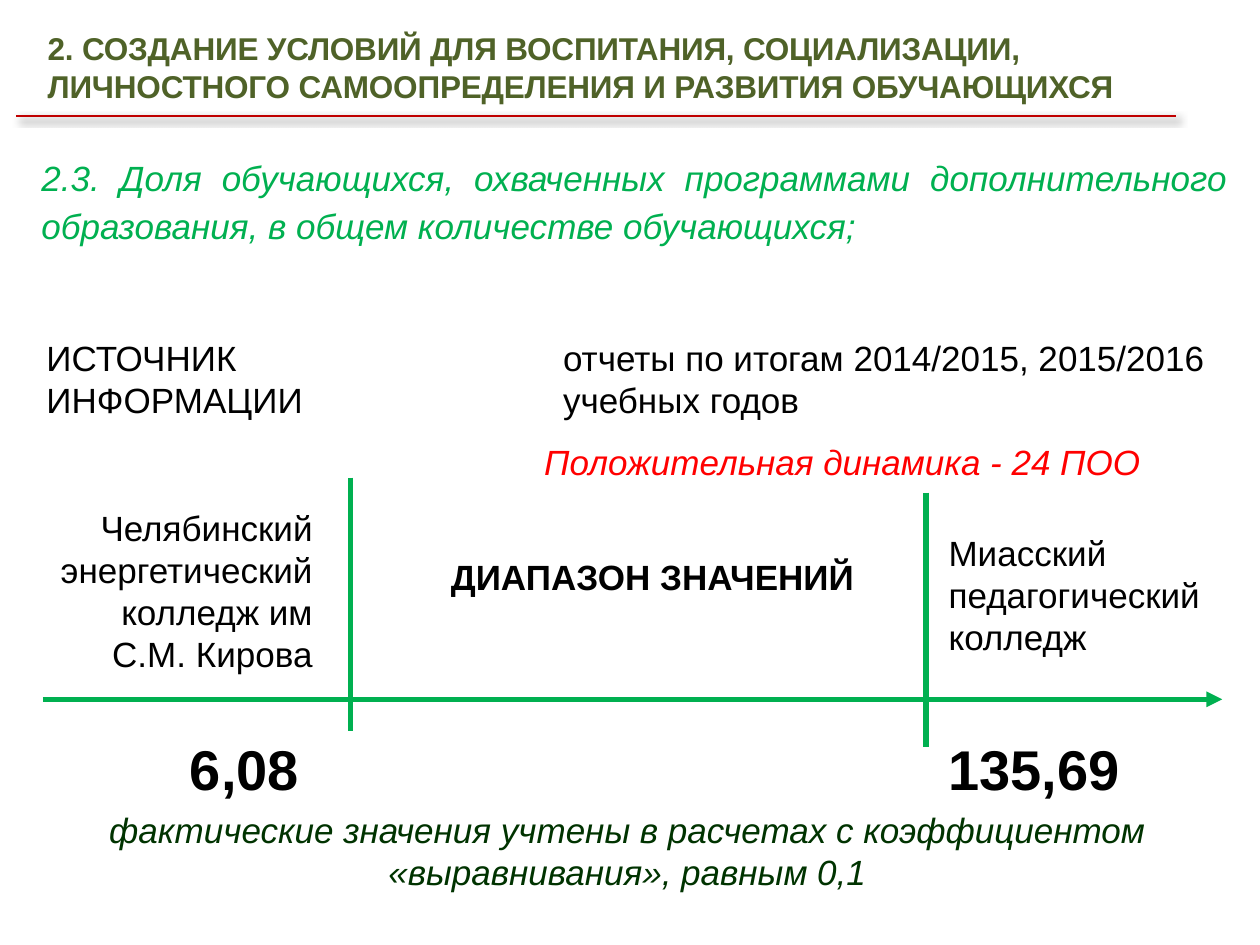
from lxml import etree
from pptx import Presentation
from pptx.dml.color import RGBColor
from pptx.enum.shapes import MSO_CONNECTOR, MSO_SHAPE
from pptx.enum.text import MSO_ANCHOR, MSO_AUTO_SIZE, PP_ALIGN
from pptx.oxml import parse_xml
from pptx.oxml.ns import nsdecls, qn
from pptx.util import Inches, Pt

LEFT, CENTER, RIGHT, JUSTIFY = PP_ALIGN.LEFT, PP_ALIGN.CENTER, PP_ALIGN.RIGHT, PP_ALIGN.JUSTIFY
STRAIGHT = MSO_CONNECTOR.STRAIGHT
RECTANGLE = MSO_SHAPE.RECTANGLE
MIDDLE = MSO_ANCHOR.MIDDLE
FIT_SHAPE = MSO_AUTO_SIZE.SHAPE_TO_FIT_TEXT

COLORS = {
    "white": "FFFFFF",
    "black": "000000",
    "olive": "4F6228",
    "green": "00B050",
    "dark_green": "003300",
    "red": "FF0000",
    "dark_red": "C00000",
}
AXIS_Y = 5.55
VALUE_TOP = 5.78
MAXIMUM_LEFT = 7.43


def rgb(name):
    return RGBColor.from_string(COLORS[name])


def write_text(shape, text, color="black", size=20, bold=False, italic=False,
               align=LEFT, wrap=True):
    """Fill a shape with one paragraph and return that paragraph."""
    frame = shape.text_frame
    frame.word_wrap = wrap
    frame.auto_size = FIT_SHAPE
    para = frame.paragraphs[0]
    para.text = text
    para.alignment = align
    font = para.font
    font.name = "Arial"
    font.size = Pt(size)
    font.bold = bold
    font.italic = italic
    font.color.rgb = rgb(color)
    return para


def add_text(page, area, text, **style):
    box = page.shapes.add_textbox(*map(Inches, area))
    return write_text(box, text, **style)


def add_filled_label(page, area, text, **style):
    label = page.shapes.add_shape(RECTANGLE, *map(Inches, area))
    label.shadow.inherit = False
    label.fill.solid()
    label.fill.fore_color.rgb = rgb("white")
    label.line.fill.background()
    label.text_frame.vertical_anchor = MIDDLE
    write_text(label, text, **style)


def add_line(page, start, end, color="green", width=3):
    """Draw a straight line and return it with its empty effect list."""
    line = page.shapes.add_connector(STRAIGHT, *map(Inches, start + end))
    line.line.color.rgb = rgb(color)
    line.line.width = Pt(width)
    effects = etree.SubElement(line._element.spPr, qn("a:effectLst"))
    return line, effects


def add_heading(page):
    _, effects = add_line(page, (0.13, 0.92), (9.33, 0.92), "dark_red", 1.5)
    effects.append(parse_xml(
        f'<a:outerShdw {nsdecls("a")} blurRad="{Pt(4)}" dist="{Pt(3)}" dir="2700000" '
        'algn="tl" rotWithShape="0"><a:srgbClr val="000000"><a:alpha val="40000"/>'
        '</a:srgbClr></a:outerShdw>'))
    heading = add_text(
        page, (0.28, 0.18, 8.98, 0.71),
        "2. СОЗДАНИЕ УСЛОВИЙ ДЛЯ ВОСПИТАНИЯ, СОЦИАЛИЗАЦИИ, "
        "ЛИЧНОСТНОГО САМООПРЕДЕЛЕНИЯ И РАЗВИТИЯ ОБУЧАЮЩИХСЯ",
        color="olive", size=18, bold=True)
    heading.runs[0].font._element.set("spc", "-10")


def add_indicator(page):
    indicator = add_text(
        page, (0.23, 1.14, 9.61, 0.89),
        "2.3. Доля обучающихся, охваченных программами дополнительного образования, "
        "в общем количестве обучающихся;",
        color="green", italic=True, align=JUSTIFY)
    indicator.line_spacing = 1.15
    add_text(page, (0.27, 2.62, 2.49, 0.77), "ИСТОЧНИК ИНФОРМАЦИИ")
    add_text(page, (4.37, 2.62, 5.35, 0.77),
             "отчеты по итогам 2014/2015, 2015/2016 учебных годов")


def add_value_range(page):
    """Draw the axis with its lowest and highest values."""
    for x, top, bottom in ((2.78, 3.79, 5.8), (7.35, 3.91, 5.93)):
        add_line(page, (x, top), (x, bottom))
    axis, _ = add_line(page, (0.34, AXIS_Y), (9.7, AXIS_Y))
    etree.SubElement(axis.line._get_or_add_ln(), qn("a:tailEnd"), type="triangle")

    add_text(page, (0.29, 3.97, 2.29, 1.45),
             "Челябинский энергетический колледж им С.М. Кирова", align=RIGHT)
    add_text(page, (MAXIMUM_LEFT, 4.17, 2.42, 1.11), "Миасский педагогический колледж")
    add_text(page, (3.48, 4.36, 6.22, 0.44), "ДИАПАЗОН ЗНАЧЕНИЙ", bold=True)
    for left, width, value in ((1.41, 1.07, "6,08"), (MAXIMUM_LEFT, 1.57, "135,69")):
        add_text(page, (left, VALUE_TOP, width, 0.64), value,
                 size=32, bold=True, wrap=False)


def main():
    deck = Presentation()
    deck.slide_width, deck.slide_height = Inches(10), Inches(7.5)
    page = deck.slides.add_slide(deck.slide_layouts[6])
    add_heading(page)
    add_indicator(page)
    add_value_range(page)
    add_filled_label(page, (4.12, 3.44, 5.21, 0.44), "Положительная динамика - 24 ПОО ",
                     color="red", italic=True, align=CENTER)
    add_text(page, (-0.02, 6.37, 10, 0.77),
             "фактические значения учтены в расчетах с коэффициентом "
             "«выравнивания», равным 0,1",
             color="dark_green", italic=True, align=CENTER)
    deck.save("out.pptx")


if __name__ == "__main__":
    main()
